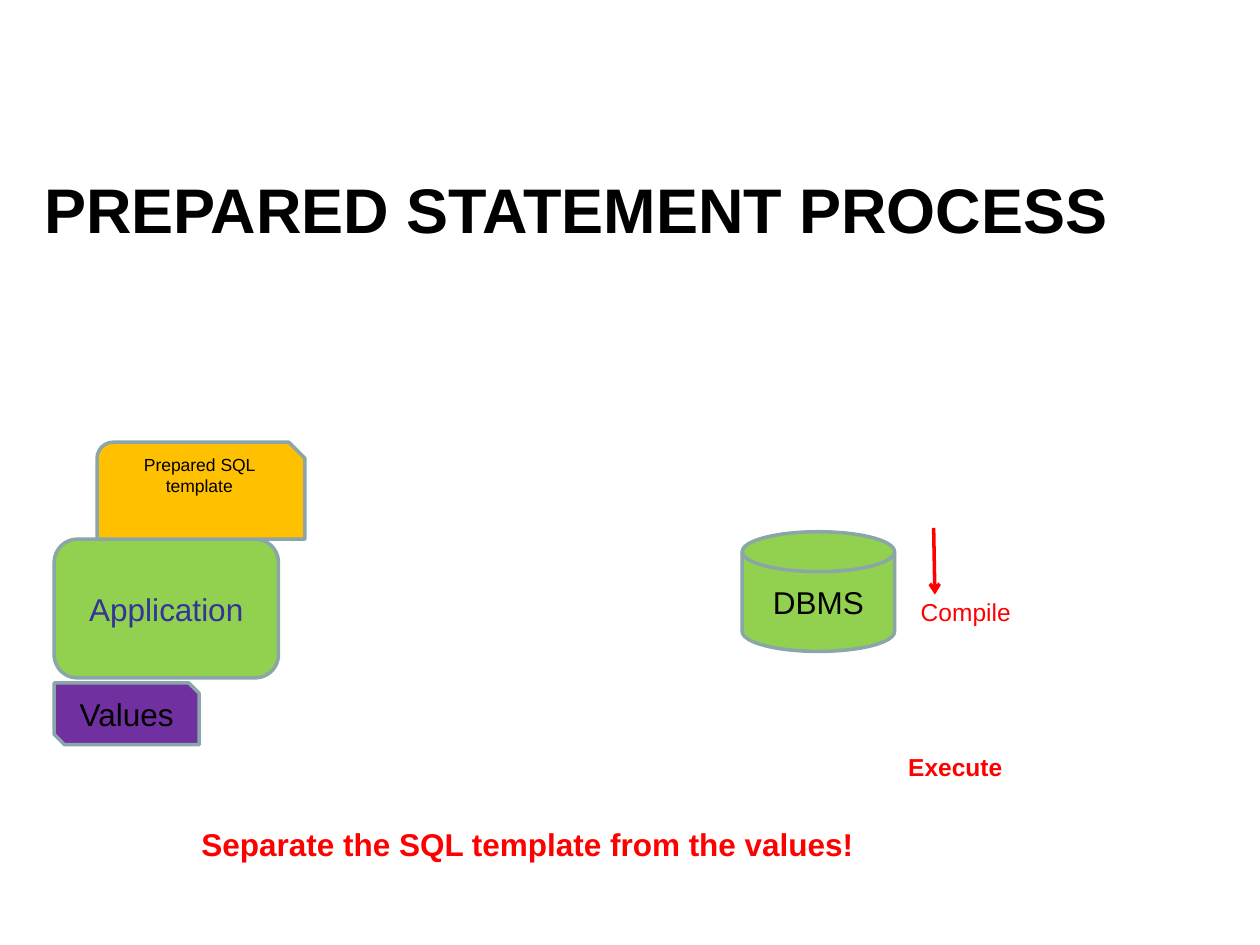
from lxml import etree
from pptx import Presentation
from pptx.dml.color import RGBColor
from pptx.enum.shapes import MSO_CONNECTOR, MSO_SHAPE
from pptx.enum.text import MSO_ANCHOR, MSO_AUTO_SIZE, PP_ALIGN
from pptx.oxml.ns import qn
from pptx.util import Inches, Pt

LEFT, CENTER = PP_ALIGN.LEFT, PP_ALIGN.CENTER
TOP, MIDDLE = MSO_ANCHOR.TOP, MSO_ANCHOR.MIDDLE
COLORS = {
    "black": "000000", "navy": "333399", "red": "FF0000", "outline": "8AA6A8",
    "green": "92D050", "amber": "FFC000", "purple": "7030A0",
}


def color(name):
    return RGBColor.from_string(COLORS[name])


def write(box, text, size, ink, align=LEFT, anchor=TOP, bold=False):
    frame = box.text_frame
    frame.text = text
    frame.word_wrap = True
    frame.auto_size = MSO_AUTO_SIZE.NONE
    frame.vertical_anchor = anchor
    para = frame.paragraphs[0]
    para.alignment = align
    para.font.name = "Arial"
    para.font.size = Pt(size)
    para.font.bold = bold
    para.font.color.rgb = color(ink)


def add_title(page, left, top, width, height):
    title = page.shapes.title
    title.left, title.top = Inches(left), Inches(top)
    title.width, title.height = Inches(width), Inches(height)
    write(title, "PREPARED STATEMENT PROCESS", 36, "black", bold=True)
    title.text_frame.margin_top = Inches(0.1)


def add_block(page, kind, left, top, width, height, fill, text, size=18, ink="black"):
    block = page.shapes.add_shape(
        kind, Inches(left), Inches(top), Inches(width), Inches(height))
    block.shadow.inherit = False
    block.fill.solid()
    block.fill.fore_color.rgb = color(fill)
    block.line.color.rgb = color("outline")
    block.line.width = Pt(2)
    write(block, text, size, ink, CENTER, MIDDLE)
    return block


def add_label(page, left, top, width, height, text, size=14, align=LEFT, bold=True):
    label = page.shapes.add_textbox(
        Inches(left), Inches(top), Inches(width), Inches(height))
    write(label, text, size, "red", align, bold=bold)


def add_arrow(page, x1, y1, x2, y2):
    arrow = page.shapes.add_connector(
        MSO_CONNECTOR.STRAIGHT, Inches(x1), Inches(y1), Inches(x2), Inches(y2))
    arrow.line.color.rgb = color("red")
    arrow.line.width = Pt(2)
    etree.SubElement(arrow.line._get_or_add_ln(), qn("a:tailEnd"), type="arrow")
    etree.SubElement(arrow._element.spPr, qn("a:effectLst"))


def add_application(page, left, top):
    """Application block with the template above it and the values below."""
    add_block(page, MSO_SHAPE.ROUNDED_RECTANGLE, left, top, 1.78, 1.1,
              "green", "Application", ink="navy")
    template = add_block(page, MSO_SHAPE.SNIP_ROUND_RECTANGLE,
                         left + 0.34, top - 0.77, 1.65, 0.77,
                         "amber", "Prepared SQL template", size=10)
    template.text_frame.margin_bottom = Inches(0.34)
    add_block(page, MSO_SHAPE.SNIP_2_DIAG_RECTANGLE, left, top + 1.14, 1.15, 0.49,
              "purple", "Values")


def add_database(page, left, top):
    """Database drum with its compile and execute steps."""
    add_block(page, MSO_SHAPE.FLOWCHART_MAGNETIC_DISK, left, top, 1.21, 0.95,
              "green", "DBMS")
    add_arrow(page, left + 1.52, top - 0.03, left + 1.53, top + 0.5)
    add_label(page, left + 1.08, top + 0.47, 1.39, 0.34, "Compile",
              align=CENTER, bold=False)
    add_label(page, left + 1.22, top + 1.7, 1.06, 0.34, "Execute")


def main():
    deck = Presentation()
    deck.slide_width, deck.slide_height = Inches(10), Inches(7.5)
    page = deck.slides.add_slide(deck.slide_layouts[5])
    add_title(page, 0.25, 1.25, 9.42, 1.08)
    add_application(page, 0.43, 4.28)
    add_database(page, 5.89, 4.22)
    add_label(page, 1.5, 6.5, 5.91, 0.4,
              "Separate the SQL template from the values!", size=18)
    deck.save("out.pptx")


if __name__ == "__main__":
    main()
